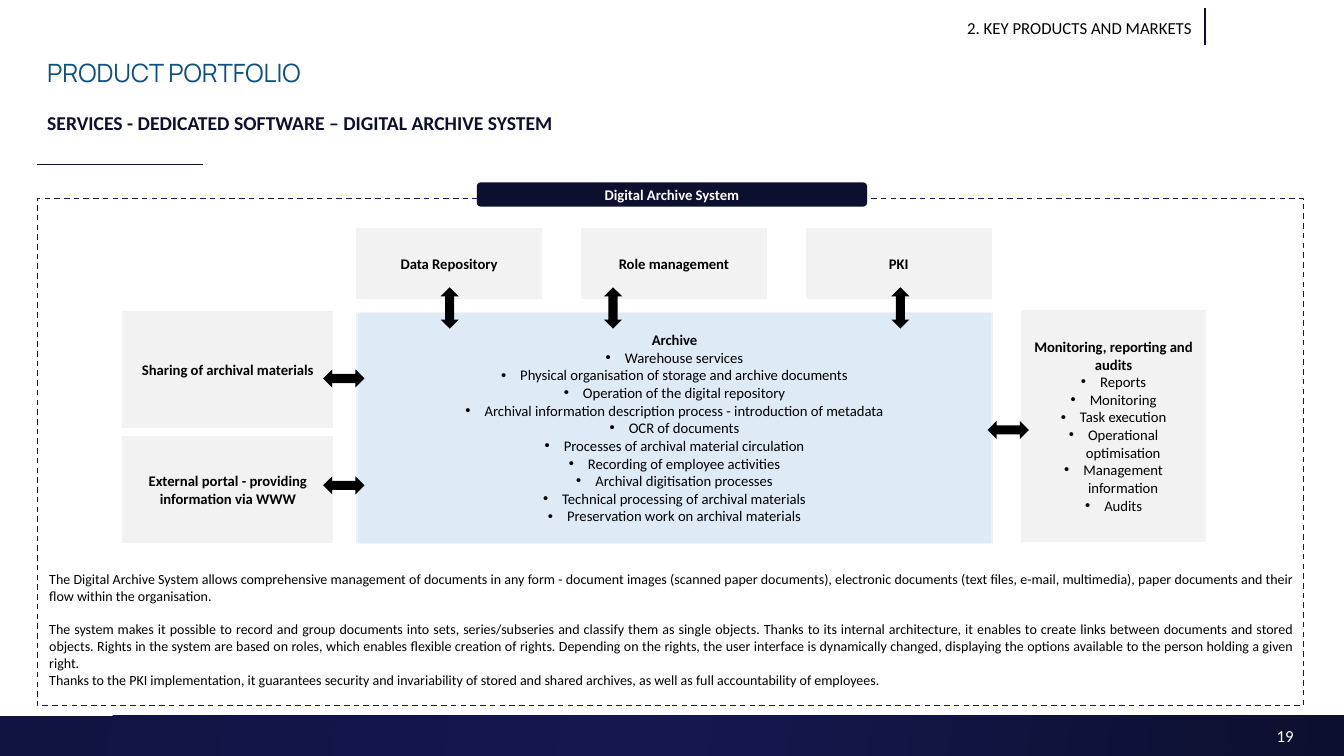
from copy import deepcopy

from lxml import etree
from pptx import Presentation
from pptx.dml.color import RGBColor
from pptx.enum import dml, shapes, text
from pptx.oxml import ns
from pptx.util import Inches, Pt

NAVY = RGBColor(0x0C, 0x0F, 0x2E)
INDIGO = RGBColor(0x15, 0x18, 0x4F)
DEEP = RGBColor(0x11, 0x13, 0x43)
BLUE = RGBColor(0x0D, 0x4F, 0x81)
PALE = RGBColor(0xDE, 0xEB, 0xF7)
GREY = RGBColor(0xF2, 0xF2, 0xF2)
WHITE = RGBColor(0xFF, 0xFF, 0xFF)
BLACK = RGBColor(0, 0, 0)

KIND = shapes.MSO_SHAPE
LEFT, MID, RIGHT, JUST = (text.PP_ALIGN.LEFT, text.PP_ALIGN.CENTER,
                          text.PP_ALIGN.RIGHT, text.PP_ALIGN.JUSTIFY)


class Deck:
    """Draws styled elements on the current slide."""

    def __init__(self, slide, font="Calibri"):
        self.slide = slide
        self.font = font

    def letter(self, frame, lines, size, color, align, bold=False, bullets=False,
               font=None, middle=True):
        frame.word_wrap = True
        frame.vertical_anchor = text.MSO_ANCHOR.MIDDLE if middle else text.MSO_ANCHOR.TOP
        frame.text = "\n".join(lines)
        for i, para in enumerate(frame.paragraphs):
            para.alignment = align
            if bullets and i:
                props = para._p.get_or_add_pPr()
                props.set("marL", str(Inches(0.19)))
                props.set("indent", str(-Inches(0.19)))
                etree.SubElement(props, ns.qn("a:buFont")).set("typeface", "Arial")
                etree.SubElement(props, ns.qn("a:buChar")).set("char", "•")
            for run in para.runs:
                run.font.name = font or self.font
                run.font.size = Pt(size)
                run.font.color.rgb = color
                run.font.bold = bold and not (bullets and i)

    def label(self, box, lines, size, color, align=LEFT, **style):
        item = self.slide.shapes.add_textbox(*map(Inches, box))
        self.letter(item.text_frame, lines, size, color, align, **style)
        return item.text_frame

    def shape(self, box, fill=None, line=None, width=1, kind=KIND.RECTANGLE, turn=0):
        item = self.slide.shapes.add_shape(kind, *map(Inches, box))
        item.shadow.inherit = False
        item.rotation = turn
        if fill is None:
            item.fill.background()
        else:
            item.fill.solid()
            item.fill.fore_color.rgb = fill
        if line is None:
            item.line.fill.background()
        else:
            item.line.color.rgb = line
            item.line.width = Pt(width)
        return item

    def card(self, box, lines, fill=GREY):
        item = self.shape(box, fill, GREY)
        self.letter(item.text_frame, lines, 10.5, BLACK, MID, bold=True, bullets=True)

    def arrow(self, x, y, turn=0):
        self.shape((x - 0.09, y - 0.2, 0.18, 0.41), BLACK,
                   kind=KIND.UP_DOWN_ARROW, turn=turn)

    def rule(self, x1, y1, x2, y2, width):
        item = self.slide.shapes.add_connector(
            shapes.MSO_CONNECTOR.STRAIGHT, *map(Inches, (x1, y1, x2, y2)))
        item.line.color.rgb = NAVY
        item.line.width = Pt(width)
        etree.SubElement(item._element.spPr, ns.qn("a:effectLst"))

    def band(self, box, colors, angle):
        item = self.shape(box)
        item.fill.gradient()
        item.fill.gradient_angle = 360 - angle
        stops = item._element.xpath(".//a:gsLst")[0]
        stops.insert(1, deepcopy(stops[0]))
        for i, (stop, color) in enumerate(zip(item.fill.gradient_stops, colors)):
            stop.position = i / (len(colors) - 1)
            stop.color.rgb = color


def main():
    prs = Presentation()
    prs.slide_width, prs.slide_height = Inches(13.33), Inches(7.5)
    deck = Deck(prs.slides.add_slide(prs.slide_layouts[6]))

    deck.band((0, 7.1, 13.33, 0.4), (DEEP, INDIGO, NAVY), 10)
    deck.rule(11.95, 0.08, 11.95, 0.45, 1.5)
    body = deck.label((0.39, 5.61, 12.53, 1.28), (
        "The Digital Archive System allows comprehensive management of documents in any form - document images (scanned paper documents), electronic documents (text files, e-mail, multimedia), paper documents and their flow within the organisation.",
        "The system makes it possible to record and group documents into sets, series/subseries and classify them as single objects. Thanks to its internal architecture, it enables to create links between documents and stored objects. Rights in the system are based on roles, which enables flexible creation of rights. Depending on the rights, the user interface is dynamically changed, displaying the options available to the person holding a given right.",
        "Thanks to the PKI implementation, it guarantees security and invariability of stored and shared archives, as well as full accountability of employees.",
    ), 10, BLACK, JUST, middle=False)
    body.paragraphs[1].space_before = Pt(12)
    deck.label((9.93, 7.1, 3, 0.4), ["19"], 12, WHITE, RIGHT)
    deck.rule(0.37, 1.63, 2.01, 1.63, 0.5)
    deck.label((0.37, 0.52, 12.6, 0.4), ["PRODUCT PORTFOLIO"], 18, BLUE,
               font="Manrope", middle=False)
    frame = deck.shape((0.37, 1.97, 12.56, 5.03), line=INDIGO)
    frame.line.dash_style = dml.MSO_LINE.DASH
    deck.label((7.38, 0.13, 4.54, 0.3), ["2. KEY PRODUCTS AND MARKETS"], 12, BLACK,
               RIGHT, middle=False)
    head = deck.shape((0.37, 0.93, 12.6, 0.57), line=WHITE, width=0.75)
    deck.letter(head.text_frame, ["SERVICES - DEDICATED SOFTWARE – DIGITAL ARCHIVE SYSTEM"],
                14, NAVY, LEFT, bold=True)

    tab = deck.shape((4.73, 1.81, 3.87, 0.24), NAVY, kind=KIND.ROUNDED_RECTANGLE)
    tab.adjustments[0] = 0.16
    pad = tab.text_frame
    pad.margin_left = pad.margin_right = pad.margin_top = pad.margin_bottom = 0
    deck.letter(pad, ["Digital Archive System"], 10.5, WHITE, MID, bold=True)

    deck.card((1.22, 3.09, 2.08, 1.15), ["Sharing of archival materials"])
    deck.card((1.22, 4.33, 2.08, 1.05), ["External portal - providing information via WWW"])
    for i, name in enumerate(("Data Repository", "Role management", "PKI")):
        deck.card((3.54 + i * 2.23, 2.27, 1.83, 0.69), [name])
    deck.card((10.13, 3.08, 1.83, 2.29), (
        "Monitoring, reporting and audits", "Reports", "Monitoring", "Task execution",
        "Operational optimisation", "Management information", "Audits"))
    deck.card((3.54, 3.1, 6.3, 2.29), (
        "Archive",
        "Warehouse services",
        "Physical organisation of storage and archive documents",
        "Operation of the digital repository",
        "Archival information description process - introduction of metadata",
        "OCR of documents",
        "Processes of archival material circulation",
        "Recording of employee activities",
        "Archival digitisation processes",
        "Technical processing of archival materials",
        "Preservation work on archival materials"), PALE)

    for y in (3.75, 4.81):
        deck.arrow(3.41, y, 90)
    for x in (4.46, 6.08, 8.93):
        deck.arrow(x, 3.05)
    deck.arrow(10, 4.26, 270)

    prs.save("out.pptx")


if __name__ == "__main__":
    main()
